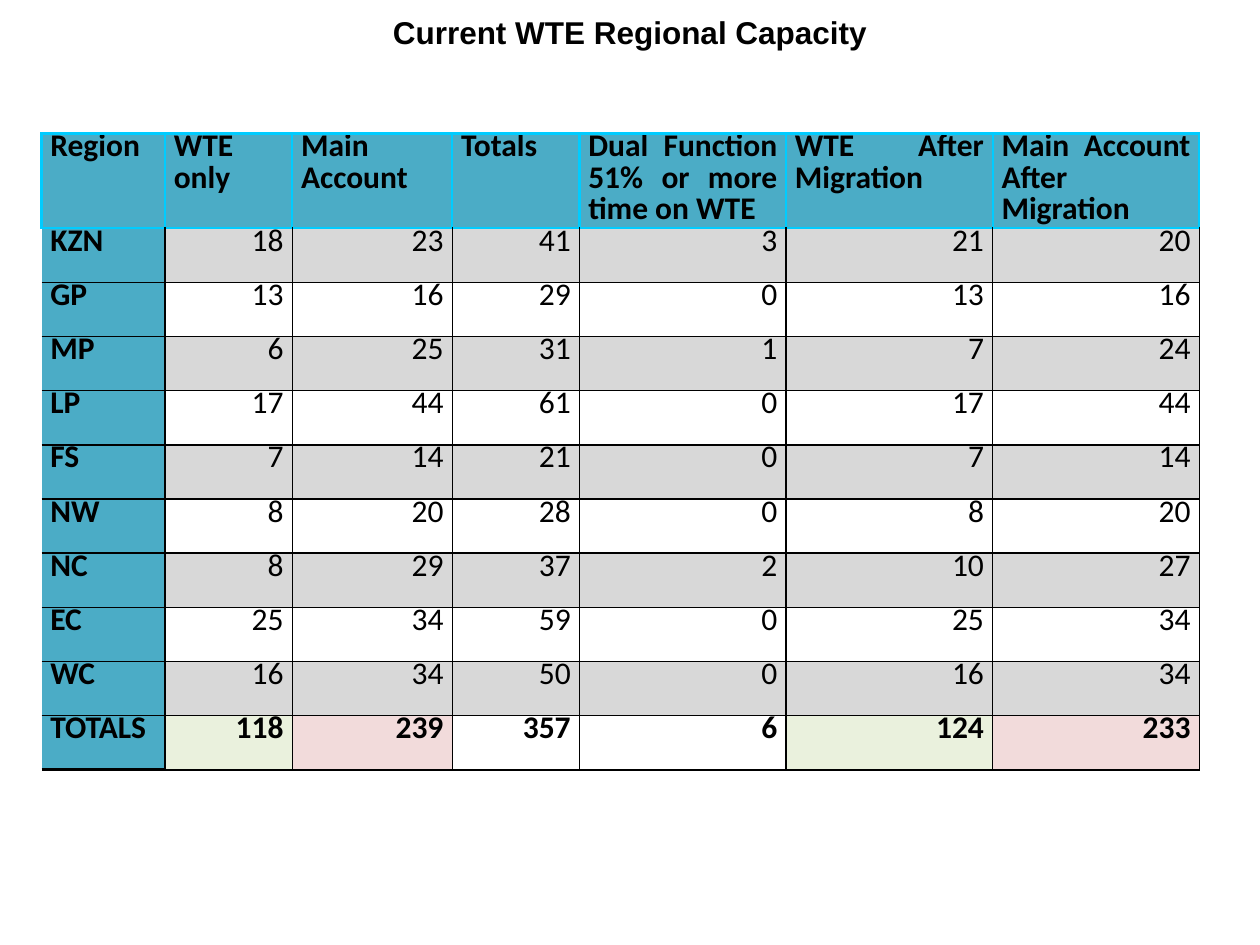
"""Build the slide showing current WTE capacity by region."""
from lxml import etree
from pptx import Presentation
from pptx.dml.color import RGBColor
from pptx.enum.text import MSO_ANCHOR, PP_ALIGN
from pptx.oxml.ns import qn
from pptx.util import Inches, Pt

CENTER, JUSTIFY, RIGHT = PP_ALIGN.CENTER, PP_ALIGN.JUSTIFY, PP_ALIGN.RIGHT
MIDDLE = MSO_ANCHOR.MIDDLE

TITLE = "Current WTE Regional Capacity"
HEADINGS = ["Region", "WTE only", "Main Account", "Totals",
            "Dual Function 51% or more time on WTE",
            "WTE After Migration", "Main Account After Migration"]
REGIONS = [
    ("KZN", 18, 23, 41, 3, 21, 20),
    ("GP", 13, 16, 29, 0, 13, 16),
    ("MP", 6, 25, 31, 1, 7, 24),
    ("LP", 17, 44, 61, 0, 17, 44),
    ("FS", 7, 14, 21, 0, 7, 14),
    ("NW", 8, 20, 28, 0, 8, 20),
    ("NC", 8, 29, 37, 2, 10, 27),
    ("EC", 25, 34, 59, 0, 25, 34),
    ("WC", 16, 34, 50, 0, 16, 34),
]
TOTALS = ("TOTALS", 118, 239, 357, 6, 124, 233)
ROWS = [HEADINGS, *REGIONS, TOTALS]
LAST_ROW = len(ROWS) - 1

COLORS = {"text": "000000", "label": "4BACC6", "band": "D8D8D8",
          "wte": "EAF1DD", "main": "F2DBDB",
          "grid": "000000", "header_grid": "00CCFF"}
TOTAL_FILLS = {1: "wte", 2: "main", 5: "wte", 6: "main"}
COLUMN_WIDTHS = [0.98, 1.01, 1.27, 1.01, 1.64, 1.64, 1.64]
HEADER_HEIGHT, ROW_HEIGHT = 0.75, 0.43


def format_text(paragraph, font_name, bold, alignment):
    paragraph.alignment = alignment
    for run in paragraph.runs:
        run.font.name = font_name
        run.font.size = Pt(18)
        run.font.bold = bold
        run.font.color.rgb = RGBColor.from_string(COLORS["text"])


def fill_name(row, column):
    if row == 0 or column == 0:
        return "label"
    if row == LAST_ROW:
        return TOTAL_FILLS.get(column)
    return "band" if row % 2 else None


def cell_borders(row, column):
    header = ("header_grid", 1.5)
    if row == 0:
        return dict.fromkeys("LRTB", header)
    borders = dict.fromkeys("LRTB", ("grid", 1))
    if row == 1:
        borders["T"] = header
    if column == 0:
        borders["L"] = None
        if row == LAST_ROW:
            borders["B"] = ("grid", 2.25)
    return borders


def draw_borders(cell, borders):
    properties = cell._tc.get_or_add_tcPr()
    for side, border in borders.items():
        line = etree.SubElement(properties, qn(f"a:ln{side}"))
        if border is None:
            etree.SubElement(line, qn("a:noFill"))
            continue
        color, width = border
        line.set("w", str(Pt(width)))
        solid = etree.SubElement(line, qn("a:solidFill"))
        etree.SubElement(solid, qn("a:srgbClr"), val=COLORS[color])


def format_cell(cell, row, column):
    cell.text_frame.text = str(ROWS[row][column])
    cell.margin_left = cell.margin_right = Inches(0.07)
    cell.margin_top = cell.margin_bottom = 0
    is_label = row == 0 or column == 0
    paragraph = cell.text_frame.paragraphs[0]
    paragraph.line_spacing = Pt(18)
    format_text(paragraph, "Calibri", is_label or row == LAST_ROW,
                JUSTIFY if is_label else RIGHT)
    draw_borders(cell, cell_borders(row, column))
    fill = fill_name(row, column)
    if fill:
        cell.fill.solid()
        cell.fill.fore_color.rgb = RGBColor.from_string(COLORS[fill])
    else:
        cell.fill.background()


def add_title(slide):
    title = slide.shapes.title
    title.left, title.top = 0, 0
    title.width, title.height = Inches(10), Inches(0.5)
    title.text_frame.text = TITLE
    title.text_frame.vertical_anchor = MIDDLE
    format_text(title.text_frame.paragraphs[0], "Arial", True, CENTER)


def add_capacity_table(slide):
    heights = [HEADER_HEIGHT] + [ROW_HEIGHT] * LAST_ROW
    table = slide.shapes.add_table(
        len(ROWS), len(HEADINGS), Inches(0.33), Inches(1.06),
        Inches(sum(COLUMN_WIDTHS)), Inches(sum(heights))).table
    for column, width in zip(table.columns, COLUMN_WIDTHS):
        column.width = Inches(width)
    for row, height in zip(table.rows, heights):
        row.height = Inches(height)
    for row in range(len(ROWS)):
        for column in range(len(HEADINGS)):
            format_cell(table.cell(row, column), row, column)


def main():
    presentation = Presentation()
    presentation.slide_width = Inches(10)
    presentation.slide_height = Inches(7.5)
    slide = presentation.slides.add_slide(presentation.slide_layouts[5])
    add_title(slide)
    add_capacity_table(slide)
    presentation.save("out.pptx")


if __name__ == "__main__":
    main()
